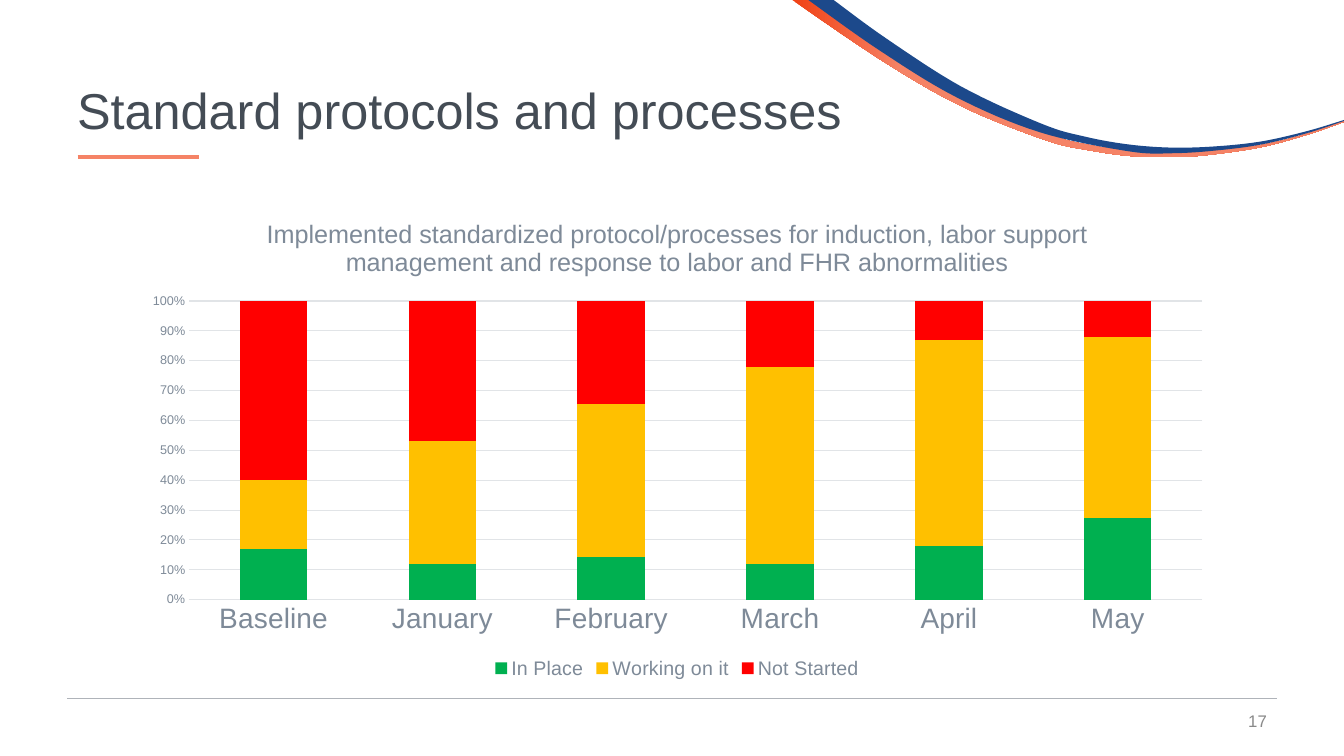
from dataclasses import dataclass
from itertools import pairwise

import pptx
import pptx.chart.chart
import pptx.chart.data
import pptx.dml.color
import pptx.enum.chart
import pptx.enum.shapes
import pptx.enum.text
import pptx.oxml
import pptx.oxml.ns
import pptx.slide
import pptx.util

Point = tuple[float, float]
WIDE = pptx.util.Inches(13.333)
HIGH = pptx.util.Inches(7.5)


@dataclass(frozen=True)
class Theme:
    face: str = "Arial"
    ink: str = "444C55"
    soft: str = "7E8A98"
    grid: str = "E1E4E7"
    rule: str = "AFB3B9"
    number: str = "898989"
    coral: str = "F58366"
    flame: str = "F04115"
    navy: str = "1C498B"
    title: float = 36
    head: float = 18
    month: float = 20
    scale: float = 9
    key: float = 14
    foot: float = 12


@dataclass(frozen=True)
class Box:
    left: float
    top: float
    width: float
    height: float


@dataclass(frozen=True)
class Label:
    box: Box
    text: str
    size: float
    color: str
    align: pptx.enum.text.PP_ALIGN
    space: float


@dataclass(frozen=True)
class Rule:
    start: float
    end: float
    row: float
    color: str
    weight: float


@dataclass(frozen=True)
class Band:
    upper: tuple[Point, ...]
    lower: tuple[Point, ...]
    colors: tuple[str, ...]


@dataclass(frozen=True)
class Series:
    name: str
    values: tuple[int, ...]
    color: str


THEME = Theme()
ALIGN = pptx.enum.text.PP_ALIGN

BANDS = (
    Band(
        ((60.38, 0), (66.15, 7.2), (71.85, 13.2), (77.93, 17.73), (81.08, 19.2), (84.38, 20),
         (87.6, 20.27), (90.9, 19.87), (94.2, 19.07), (97.43, 17.6), (100, 16)),
        ((100, 16.13), (97.43, 17.73), (94.2, 19.33), (90.98, 20.27), (87.68, 20.8), (84.3, 20.67),
         (81, 19.87), (77.78, 18.53), (71.63, 14.13), (65.85, 8.27), (58.95, 0)),
        (THEME.flame, THEME.coral),
    ),
    Band(
        ((62.03, 0), (65.93, 5.07), (71.55, 11.47), (77.55, 16.4), (80.75, 18.08), (84.03, 19.12),
         (87.35, 19.53), (90.68, 19.33), (93.98, 18.67), (97.28, 17.33), (100, 15.87)),
        ((100, 16), (97.28, 17.6), (93.98, 19.07), (90.68, 19.87), (87.3, 20.27), (83.93, 20),
         (77.33, 17.47), (71.1, 12.8), (65.33, 6.53), (60.15, 0)),
        (THEME.navy,),
    ),
)
RULES = (
    Rule(5, 95, 92.4, THEME.rule, 0.5),
    Rule(5.78, 14.78, 20.8, THEME.coral, 2.5),
)
LABELS = (
    Label(Box(72.5, 92.67, 22.5, 5.33), "17", THEME.foot, THEME.number, ALIGN.RIGHT, 1),
    Label(Box(5, 5.33, 90, 19.33), "Standard protocols and processes",
          THEME.title, THEME.ink, ALIGN.LEFT, 0.9),
)
FRAME = Box(9.68, 26.13, 81.4, 64.27)
HEAD = ("Implemented standardized protocol/processes for induction, labor support "
        "management and response to labor and FHR abnormalities")
MONTHS = ("Baseline", "January", "February", "March", "April", "May")
SERIES = (
    Series("In Place", (17, 12, 14, 12, 18, 27), "00B050"),
    Series("Working on it", (23, 41, 51, 66, 69, 60), "FFC000"),
    Series("Not Started", (60, 47, 34, 22, 13, 12), "FF0000"),
)


def rgb(code: str) -> pptx.dml.color.RGBColor:
    return pptx.dml.color.RGBColor.from_string(code)


def across(share: float) -> int:
    return round(WIDE * share / 100)


def down(share: float) -> int:
    return round(HIGH * share / 100)


def place(box: Box) -> tuple[int, int, int, int]:
    return across(box.left), down(box.top), across(box.width), down(box.height)


def style(font, size: float, color: str) -> None:
    font.name = THEME.face
    font.size = pptx.util.Pt(size)
    font.bold = False
    font.color.rgb = rgb(color)


def stroke(line, color: str, weight: float) -> None:
    line.color.rgb = rgb(color)
    line.width = pptx.util.Pt(weight)


def smooth(edge: tuple[Point, ...], steps: int = 8) -> list[Point]:
    ends = (edge[0], *edge, edge[-1])
    curve = [edge[0]]
    for spot, (start, stop) in enumerate(pairwise(edge)):
        prior, after = ends[spot], ends[spot + 3]
        for step in range(1, steps + 1):
            t = step / steps
            x, y = (
                b + t * ((c - a) + t * ((2 * a - 5 * b + 4 * c - d) + t * (3 * b - a - 3 * c + d))) / 2
                for a, b, c, d in zip(prior, start, stop, after)
            )
            curve.append((x, y))
    return curve


def draw_band(slide: pptx.slide.Slide, band: Band) -> None:
    first, *rest = [(across(x), down(y)) for x, y in smooth(band.upper) + smooth(band.lower)]
    pen = slide.shapes.build_freeform(*first)
    pen.add_line_segments(rest, close=True)
    shape = pen.convert_to_shape()
    shape.shadow.inherit = False
    shape.line.fill.background()
    if len(band.colors) == 1:
        shape.fill.solid()
        shape.fill.fore_color.rgb = rgb(band.colors[0])
        return
    shape.fill.gradient()
    shape.fill.gradient_angle = 0
    for stop, color, spot in zip(shape.fill.gradient_stops, band.colors, (0, 0.2)):
        stop.color.rgb = rgb(color)
        stop.position = spot


def draw_rule(slide: pptx.slide.Slide, rule: Rule) -> None:
    row = down(rule.row)
    line = slide.shapes.add_connector(
        pptx.enum.shapes.MSO_CONNECTOR.STRAIGHT, across(rule.start), row, across(rule.end), row)
    stroke(line.line, rule.color, rule.weight)
    line._element.spPr.append(pptx.oxml.parse_xml(
        f'<a:effectLst {pptx.oxml.ns.nsdecls("a")}/>'))


def draw_label(slide: pptx.slide.Slide, label: Label) -> None:
    frame = slide.shapes.add_textbox(*place(label.box)).text_frame
    frame.word_wrap = True
    frame.vertical_anchor = pptx.enum.text.MSO_ANCHOR.MIDDLE
    para = frame.paragraphs[0]
    para.alignment = label.align
    para.line_spacing = label.space
    run = para.add_run()
    run.text = label.text
    style(run.font, label.size, label.color)


def fix_plot(chart: pptx.chart.chart.Chart, box: Box) -> None:
    sides = zip("xywh", (box.left, box.top, box.width, box.height))
    parts = "".join(f'<c:{side} val="{share / 100}"/>' for side, share in sides)
    plot = chart._chartSpace.chart.plotArea
    for old in plot.findall(pptx.oxml.ns.qn("c:layout")):
        plot.remove(old)
    plot.insert(0, pptx.oxml.parse_xml(
        f'<c:layout {pptx.oxml.ns.nsdecls("c")}><c:manualLayout><c:layoutTarget val="inner"/>'
        f'<c:xMode val="edge"/><c:yMode val="edge"/>{parts}</c:manualLayout></c:layout>'))


def draw_chart(slide: pptx.slide.Slide) -> None:
    kinds = pptx.enum.chart
    data = pptx.chart.data.CategoryChartData()
    data.categories = MONTHS
    for item in SERIES:
        data.add_series(item.name, item.values)
    chart = slide.shapes.add_chart(
        kinds.XL_CHART_TYPE.COLUMN_STACKED_100, *place(FRAME), data).chart
    style(chart.font, 10, THEME.ink)
    run = chart.chart_title.text_frame.paragraphs[0].add_run()
    run.text = HEAD
    style(run.font, THEME.head, THEME.soft)
    chart.chart_title.include_in_layout = False
    chart.has_legend = True
    chart.legend.position = kinds.XL_LEGEND_POSITION.BOTTOM
    chart.legend.include_in_layout = False
    style(chart.legend.font, THEME.key, THEME.soft)
    plot = chart.plots[0]
    plot.gap_width, plot.overlap, plot.vary_by_categories = 150, 100, False
    for bars, item in zip(plot.series, SERIES):
        bars.format.fill.solid()
        bars.format.fill.fore_color.rgb = rgb(item.color)
    months, scale = chart.category_axis, chart.value_axis
    for axis, size in ((months, THEME.month), (scale, THEME.scale)):
        axis.major_tick_mark = axis.minor_tick_mark = kinds.XL_TICK_MARK.NONE
        style(axis.tick_labels.font, size, THEME.soft)
    stroke(months.format.line, THEME.grid, 0.75)
    scale.format.line.fill.background()
    scale.major_unit = 0.1
    scale.tick_labels.number_format = "0%"
    scale.tick_labels.number_format_is_linked = False
    stroke(scale.major_gridlines.format.line, THEME.grid, 0.75)
    fix_plot(chart, Box(5.4, 21.3, 92.6, 61.5))


def main() -> None:
    deck = pptx.Presentation()
    deck.slide_width, deck.slide_height = WIDE, HIGH
    slide = deck.slides.add_slide(deck.slide_layouts[6])
    for band in BANDS:
        draw_band(slide, band)
    for rule in RULES:
        draw_rule(slide, rule)
    for label in LABELS:
        draw_label(slide, label)
    draw_chart(slide)
    deck.save("out.pptx")


if __name__ == "__main__":
    main()
